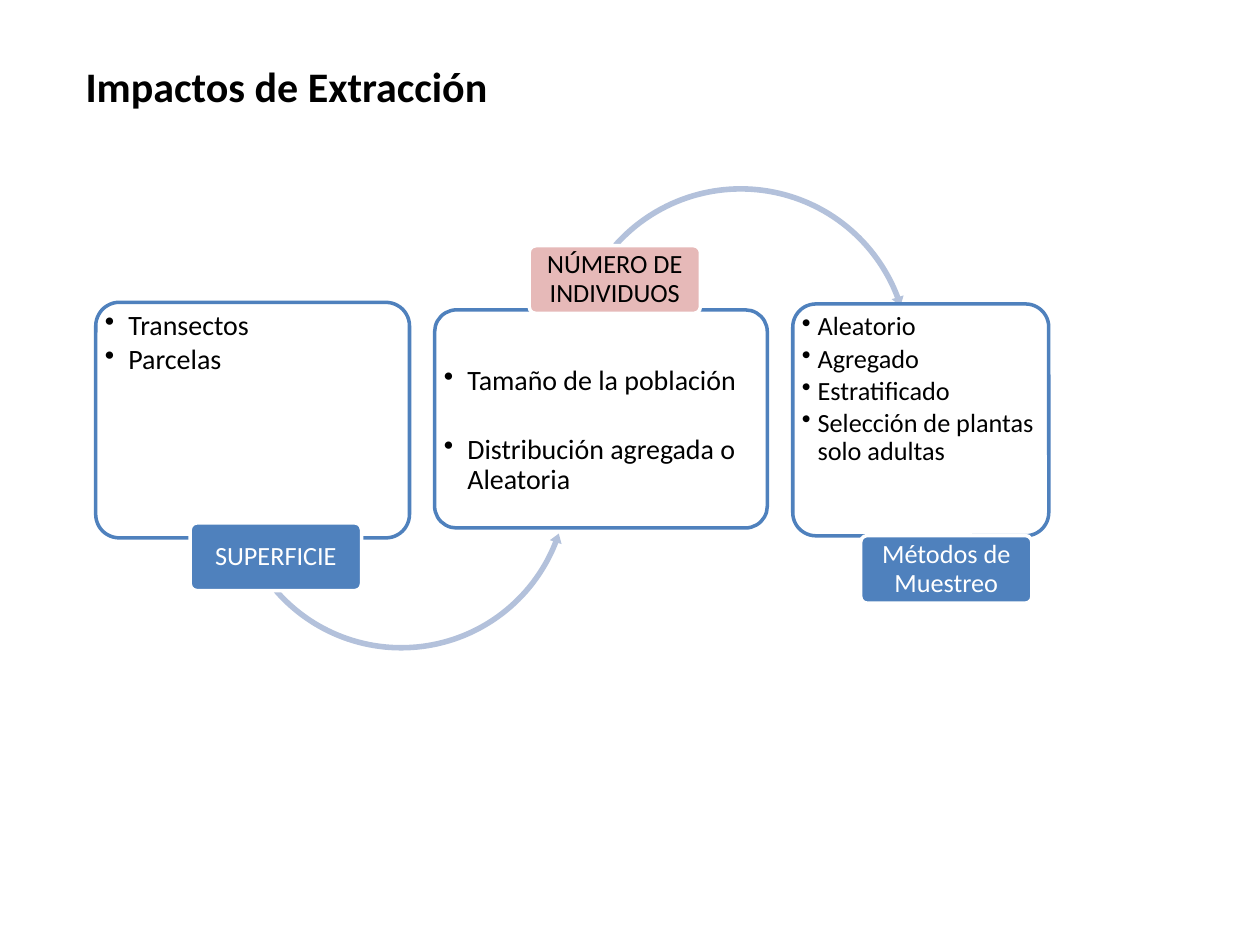
from lxml import etree
from pptx import Presentation
from pptx.dml.color import RGBColor
from pptx.enum.shapes import MSO_SHAPE
from pptx.enum.text import MSO_ANCHOR, MSO_AUTO_SIZE, PP_ALIGN
from pptx.oxml.ns import qn
from pptx.util import Pt

ROUNDED = MSO_SHAPE.ROUNDED_RECTANGLE
ARC_OVER = MSO_SHAPE.CIRCULAR_ARROW
ARC_UNDER = MSO_SHAPE.LEFT_CIRCULAR_ARROW
MIDDLE, TOP = MSO_ANCHOR.MIDDLE, MSO_ANCHOR.TOP
CENTER, LEFT = PP_ALIGN.CENTER, PP_ALIGN.LEFT
FIT_SHAPE = MSO_AUTO_SIZE.SHAPE_TO_FIT_TEXT

BLACK = RGBColor(0x00, 0x00, 0x00)
WHITE = RGBColor(0xFF, 0xFF, 0xFF)
BLUE = RGBColor(0x4F, 0x81, 0xBD)
PALE_BLUE = RGBColor(0xB3, 0xC1, 0xDB)
PINK = RGBColor(0xE6, 0xB9, 0xB8)

FONT = "Calibri"
LABEL_SIZE = (97.9, 38.7)


def add_shape(page, kind, box, fill, line=None, adjustments=(0.1,), opacity=100):
    """Add a preset shape without shadow, optionally outlined and translucent."""
    shape = page.shapes.add_shape(kind, *map(Pt, box))
    shape.shadow.inherit = False
    for index, value in enumerate(adjustments):
        shape.adjustments[index] = value
    shape.fill.solid()
    shape.fill.fore_color.rgb = fill
    if opacity < 100:
        color = shape.fill._xPr.find(qn("a:solidFill"))[0]
        etree.SubElement(color, qn("a:alpha")).set("val", str(opacity * 1000))
    if line is None:
        shape.line.fill.background()
    else:
        shape.line.color.rgb = line
        shape.line.width = Pt(2)
    return shape


def write_text(shape, lines, size, color=BLACK, bold=False, align=LEFT, anchor=TOP,
               insets=(7.2, 3.6), wrap=True, spacing=1, after=0, gap=0, indent=0):
    """Write one paragraph per line; an indent turns the lines into bullets."""
    frame = shape.text_frame
    frame.word_wrap = wrap
    frame.vertical_anchor = anchor
    frame.margin_left = frame.margin_right = Pt(insets[0])
    frame.margin_top = frame.margin_bottom = Pt(insets[1])
    for index, line in enumerate(lines):
        para = frame.add_paragraph() if index else frame.paragraphs[0]
        para.alignment = align
        para.line_spacing = spacing
        para.space_before = Pt(gap if index else 0)
        para.space_after = Pt(after)
        if indent:
            properties = para._p.get_or_add_pPr()
            properties.set("marL", str(Pt(indent)))
            properties.set("indent", str(-Pt(indent)))
            etree.SubElement(properties, qn("a:buChar")).set("char", "•")
        span = para.add_run()
        span.text = line
        span.font.name = FONT
        span.font.size = Pt(size)
        span.font.bold = bold
        span.font.color.rgb = color


def add_title(page, box, text):
    """Place the slide title."""
    title = page.shapes.add_textbox(*map(Pt, box))
    write_text(title, [text], 24, bold=True, wrap=False)
    title.text_frame.auto_size = FIT_SHAPE


def add_panel(page, box, items, size, indent, head=3, foot=31.5, gap=0):
    """Place an outlined panel with a bullet list between its head and foot."""
    left, top, width, height = box
    add_shape(page, ROUNDED, box, WHITE, BLUE, opacity=90)
    list_box = (left + 3, top + head, width - 6, height - head - foot)
    bullets = page.shapes.add_textbox(*map(Pt, list_box))
    write_text(bullets, items, size, insets=(2.2, 2.2), spacing=0.9, after=2.2,
               gap=gap, indent=indent)


def add_label(page, corner, text, fill, color):
    """Place a filled label with its top left at the given corner."""
    label = add_shape(page, ROUNDED, corner + LABEL_SIZE, fill, WHITE)
    write_text(label, [text], 15, color=color, align=CENTER, anchor=MIDDLE,
               insets=(2.2, 1.4), spacing=0.9)


def add_flow(page, left, top):
    """Place the three linked panels from the left edge and top of the first."""
    add_panel(page, (left, top, 179.3, 134.6), ["Transectos", "Parcelas"], 16, 13.5)
    add_shape(page, ARC_UNDER, (left + 76.3, top + 4.3, 196.6, 196.6), PALE_BLUE,
              adjustments=(0.016, 1.871, 12.772, 83.391, 0.018))
    add_label(page, (left + 54, top + 126), "SUPERFICIE", BLUE, WHITE)

    add_panel(page, (left + 193.7, top + 4.3, 190.1, 124.6),
              ["Tamaño de la población", "Distribución agregada o Aleatoria"],
              16, 13.5, head=30, foot=3, gap=20)
    add_shape(page, ARC_OVER, (left + 269.3, top - 68.4, 198.7, 198.7), PALE_BLUE,
              adjustments=(0.016, 1.852, 203.591, 132.953, 0.018))
    add_label(page, (left + 247.7, top - 32.4), "NÚMERO DE INDIVIDUOS", PINK, BLACK)

    add_panel(page, (left + 398.3, top + 0.9, 146.3, 132.5),
              ["Aleatorio", "Agregado", "Estratificado",
               "Selección de plantas solo adultas"], 15, 9)
    add_label(page, (left + 437.1, top + 133.2), "Métodos de Muestreo", BLUE, WHITE)


def main():
    """Build and save the deck."""
    deck = Presentation()
    deck.slide_width, deck.slide_height = Pt(720), Pt(540)
    page = deck.slides.add_slide(deck.slide_layouts[6])
    add_flow(page, 54.7, 172.8)
    add_title(page, (41.8, 31, 246.2, 36), "Impactos de Extracción")
    deck.save("out.pptx")


if __name__ == "__main__":
    main()
